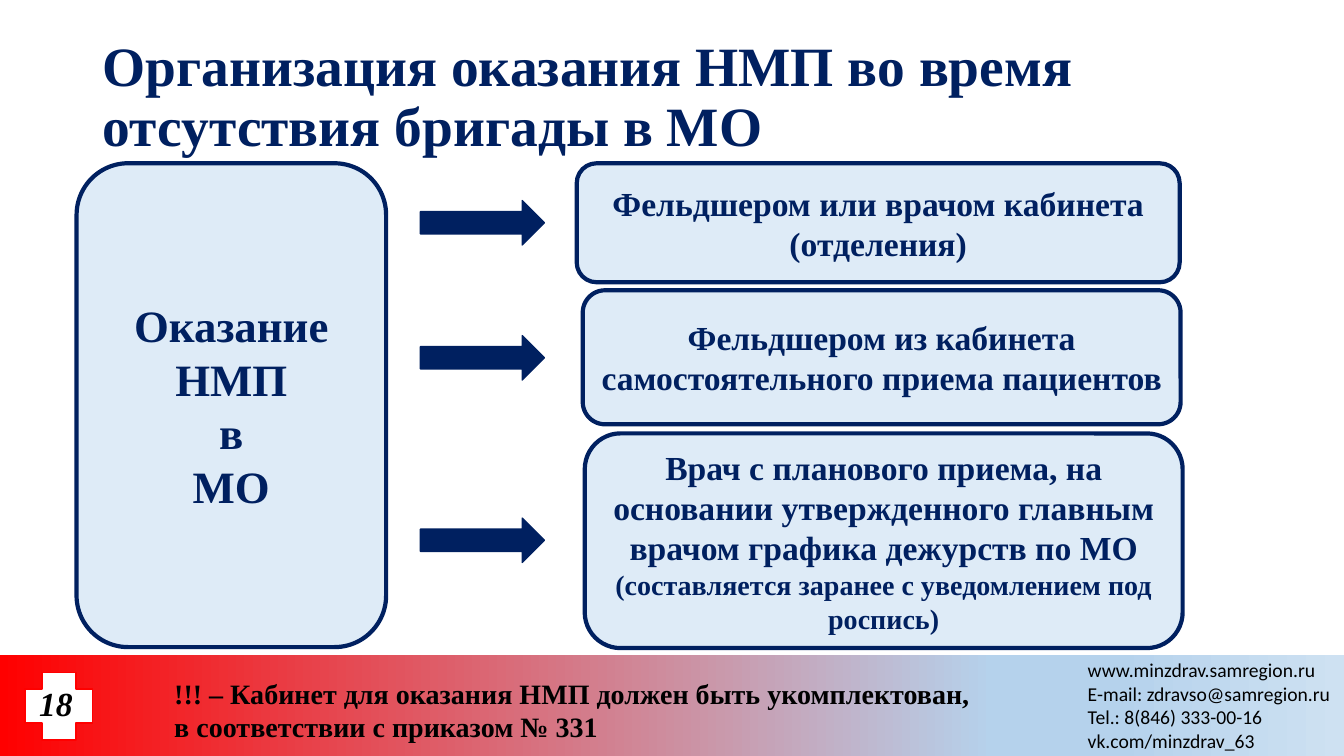
from lxml import etree
from pptx import Presentation
from pptx.dml.color import RGBColor
from pptx.enum import shapes, text
from pptx.oxml.ns import qn
from pptx.util import Inches, Pt

NAVY = RGBColor(0x00, 0x20, 0x60)
PALE_BLUE = RGBColor(0xDE, 0xEB, 0xF7)
BLACK = RGBColor(0, 0, 0)
WHITE = RGBColor(255, 255, 255)
RED = RGBColor(255, 0, 0)
SERIF = "Times New Roman"
BAND_STOPS = [(0, "FF0000"), (74, "B5D2EC"), (83, "B5D2EC"), (100, "CEE1F2")]

prs = Presentation()
prs.slide_width, prs.slide_height = Inches(13.33), Inches(7.5)
slide = prs.slides.add_slide(prs.slide_layouts[5])


def add_figure(kind, box, fill, line, weight):
    figure = slide.shapes.add_shape(kind, *map(Inches, box))
    figure.shadow.inherit = False
    figure.fill.solid()
    figure.fill.fore_color.rgb = fill
    figure.line.color.rgb = line
    figure.line.width = Pt(weight)
    return figure


def write(frame, lines, color, font=SERIF, bold=True, italic=False, align=None):
    """Fill a text frame with (wording, size) lines, one paragraph each."""
    for i, (wording, size) in enumerate(lines):
        paragraph = frame.paragraphs[0] if i == 0 else frame.add_paragraph()
        paragraph.alignment = align
        run = paragraph.add_run()
        run.text = wording
        run.font.name, run.font.size = font, Pt(size)
        run.font.bold, run.font.italic = bold, italic
        run.font.color.rgb = color


# Footer band with a four-stop gradient
band = slide.shapes.add_shape(shapes.MSO_SHAPE.RECTANGLE, 0, Inches(6.5),
                              prs.slide_width, Inches(1))
band.shadow.inherit = False
band.line.fill.background()
band.fill.gradient()
band.fill.gradient_angle = 0
stop_list = band._element.spPr.find(qn("a:gradFill")).find(qn("a:gsLst"))
stop_list.clear()
for percent, color in BAND_STOPS:
    stop = etree.SubElement(stop_list, qn("a:gs"), pos=str(percent * 1000))
    etree.SubElement(stop, qn("a:srgbClr"), val=color)

# White cross behind the page number
add_figure(shapes.MSO_SHAPE.CROSS, (0.25, 6.67, 0.67, 0.67), WHITE, RED, 1)

# Contacts
contacts = slide.shapes.add_textbox(Inches(10.69), Inches(6.48), Inches(2.63), Inches(1.04))
contacts.text_frame.word_wrap = False
write(contacts.text_frame,
      [("www.minzdrav.samregion.ru", 14), ("E-mail: zdravso@samregion.ru", 14),
       ("Tel.: 8(846) 333-00-16", 14), ("vk.com/minzdrav_63", 14)],
      BLACK, font="Calibri", bold=False)

# Title
title = slide.shapes.title
title.left, title.top = Inches(0.92), Inches(0.4)
title.width, title.height = Inches(10.42), Inches(1.15)
title.text_frame.word_wrap = True
title.text_frame.auto_size = text.MSO_AUTO_SIZE.NONE
title.text_frame.vertical_anchor = text.MSO_ANCHOR.MIDDLE
write(title.text_frame, [("Организация оказания НМП во время отсутствия бригады в МО", 39.6)],
      NAVY, align=text.PP_ALIGN.LEFT)
title.text_frame.paragraphs[0].line_spacing = 0.9

# Page number
page_number = slide.shapes.add_textbox(Inches(0.29), Inches(6.73), Inches(0.54), Inches(0.5))
page_number.text_frame.word_wrap = False
write(page_number.text_frame, [("18", 24)], BLACK, italic=True)

# Care in the organisation, and the three who provide it
cards = [
    ((0.76, 1.62, 3.07, 4.8),
     [("Оказание", 32), ("НМП", 32), ("в", 32), ("МО", 32)]),
    ((5.72, 1.62, 5.98, 1.18),
     [("Фельдшером или врачом кабинета (отделения)", 24)]),
    ((5.78, 2.88, 5.93, 1.33),
     [("Фельдшером из кабинета самостоятельного приема пациентов", 24)]),
    ((5.8, 4.3, 5.93, 2.13),
     [("Врач с планового приема, на основании утвержденного главным "
       "врачом графика дежурств по МО", 24),
      ("(составляется заранее с уведомлением под роспись)", 20)]),
]
for box, lines in cards:
    card = add_figure(shapes.MSO_SHAPE.ROUNDED_RECTANGLE, box, PALE_BLUE, NAVY, 3)
    card.text_frame.word_wrap = True
    card.text_frame.vertical_anchor = text.MSO_ANCHOR.MIDDLE
    write(card.text_frame, lines, NAVY, align=text.PP_ALIGN.CENTER)

# Arrows to each provider
for top in (1.99, 3.33, 5.14):
    add_figure(shapes.MSO_SHAPE.RIGHT_ARROW, (4.17, top, 1.23, 0.44), NAVY, NAVY, 1)

# Note in the footer
note = slide.shapes.add_textbox(Inches(1.63), Inches(6.66), Inches(8.74), Inches(0.77))
note.text_frame.word_wrap = True
write(note.text_frame,
      [("!!! – Кабинет для оказания НМП должен быть укомплектован,", 20),
       ("в соответствии с приказом № 331", 20)], BLACK)

prs.save("out.pptx")
